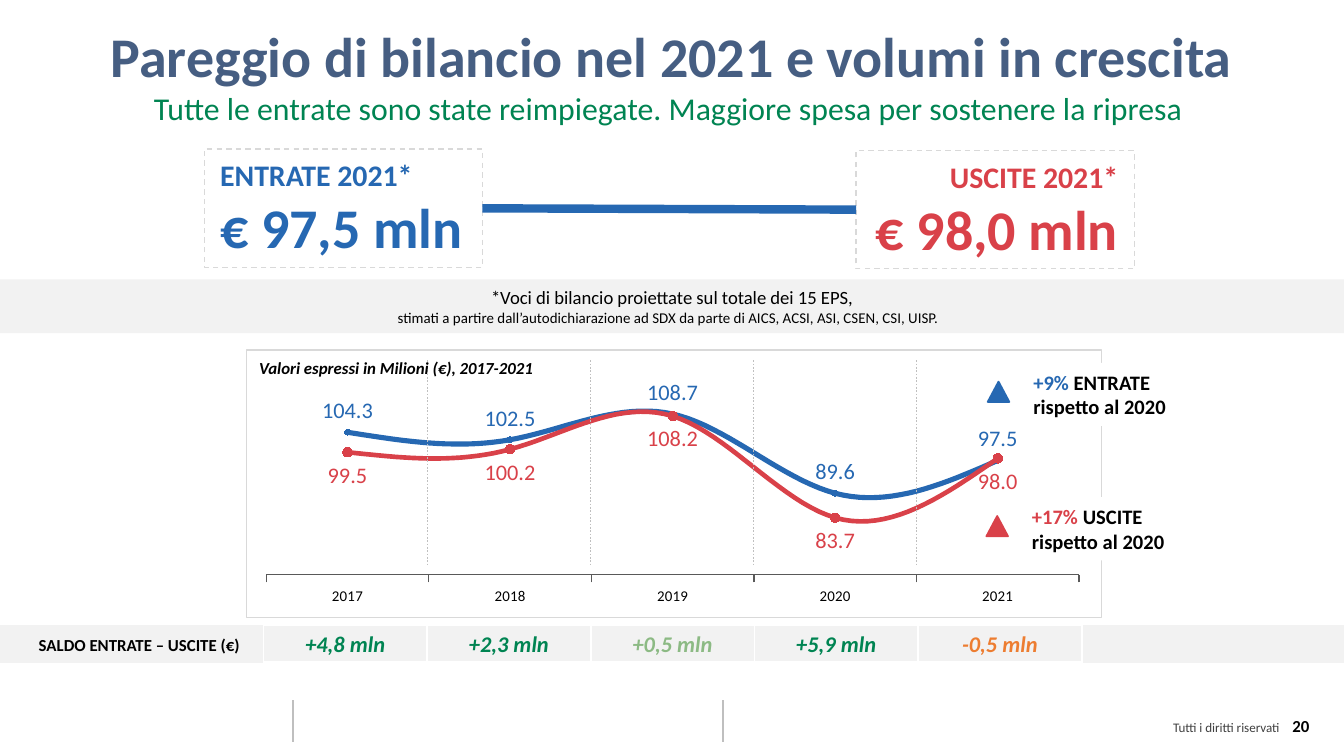
from lxml.etree import SubElement
from pptx import Presentation
from pptx.chart.data import CategoryChartData
from pptx.dml.color import RGBColor
from pptx.enum.chart import XL_CHART_TYPE, XL_LABEL_POSITION, XL_MARKER_STYLE, XL_TICK_LABEL_POSITION, XL_TICK_MARK
from pptx.enum.dml import MSO_LINE
from pptx.enum.shapes import MSO_CONNECTOR, MSO_SHAPE
from pptx.enum.text import MSO_ANCHOR, PP_ALIGN
from pptx.oxml import parse_xml
from pptx.oxml.ns import nsdecls, qn
from pptx.util import Inches, Pt

COLORS = {
    "blue": "2668B2", "red": "D94149", "navy": "465E82", "green": "008452",
    "pale": "8CBA84", "orange": "ED7D31", "black": "000000", "dark": "404040",
    "axis": "595959", "rule": "BFBFBF", "edge": "D9D9D9", "band": "F2F2F2",
    "white": "FFFFFF",
}
LEFT, MID, RIGHT = PP_ALIGN.LEFT, PP_ALIGN.CENTER, PP_ALIGN.RIGHT


def color(name):
    return RGBColor.from_string(COLORS[name])


def style(font, size, tint, bold=False, slant=False):
    font.name = "Calibri"
    font.size = Pt(size)
    font.bold = bold
    font.italic = slant
    font.color.rgb = color(tint)


def write(frame, lines, align=LEFT, wrap=True):
    frame.word_wrap = wrap
    for i, runs in enumerate(lines):
        para = frame.paragraphs[0] if i == 0 else frame.add_paragraph()
        para.alignment = align
        for text, *look in runs:
            run = para.add_run()
            run.text = text
            style(run.font, *look)


def label(slide, box, lines, align=LEFT, wrap=True):
    frame = slide.shapes.add_textbox(*map(Inches, box)).text_frame
    write(frame, lines, align, wrap)
    return frame


def shape(slide, box, fill=None, line=None, width=1, kind=MSO_SHAPE.RECTANGLE):
    item = slide.shapes.add_shape(kind, *map(Inches, box))
    item.shadow.inherit = False
    if fill:
        item.fill.solid()
        item.fill.fore_color.rgb = color(fill)
    else:
        item.fill.background()
    if line:
        item.line.color.rgb = color(line)
        item.line.width = Pt(width)
    else:
        item.line.fill.background()
    return item


def rule(slide, x1, y1, x2, y2, tint, width):
    item = slide.shapes.add_connector(MSO_CONNECTOR.STRAIGHT, *map(Inches, (x1, y1, x2, y2)))
    item.line.color.rgb = color(tint)
    item.line.width = Pt(width)
    SubElement(item._element.spPr, qn("a:effectLst"))
    return item


def footer(slide, box):
    x, y, w, h = box
    for left in (2.18, 5.38):
        rule(slide, x + left, y, x + left, y + h, "rule", 1)
    frame = label(slide, (x + 7.69, y + 0.1, 1.9, 0.19), [[("Tutti i diritti riservati", 7, "dark")]], RIGHT)
    frame.margin_left = frame.margin_right = Inches(0.07)
    frame.margin_top = frame.margin_bottom = Inches(0.04)
    label(slide, (x + 9.32, y + 0.07, 0.52, 0.3), [[("20", 9, "black", True)]], RIGHT)


def title(slide, box):
    label(slide, box, [
        [("Pareggio di bilancio nel 2021 e volumi in crescita", 30, "navy", True)],
        [("Tutte le entrate sono state reimpiegate. Maggiore spesa per sostenere la ripresa ", 17, "green")],
    ], MID)


def total(slide, box, head, value, tint, align):
    x, y, w, h = box
    label(slide, (x + 0.02, y + 0.01, 2.03, h),
          [[(head, 16, tint, True)], [(value, 30, tint, True)]], align, False)
    shape(slide, box, line="edge", width=0.75).line.dash_style = MSO_LINE.DASH


def totals(slide, box):
    x, y, w, h = box
    wide = 2.07
    total(slide, (x, y, wide, h), "ENTRATE 2021*", "€ 97,5 mln", "blue", LEFT)
    total(slide, (x + w - wide, y + 0.01, wide, h), "USCITE 2021*", "€ 98,0 mln", "red", RIGHT)
    rule(slide, x + wide, y + h / 2, x + w - wide, y + h / 2 + 0.01, "blue", 4.5)


def note(slide, box):
    write(shape(slide, box, "band").text_frame, [
        [("*Voci di bilancio proiettate sul totale dei 15 EPS,", 10, "black")],
        [("stimati a partire dall’autodichiarazione ad SDX da parte di "
          "AICS, ACSI, ASI, CSEN, CSI, UISP.  ", 8, "black")],
    ], MID)


def frame_plot(chart):
    area = chart._chartSpace.chart.plotArea
    old = area.find(qn("c:layout"))
    if old is not None:
        area.remove(old)
    spots = zip("xywh", (0.023, 0.064, 0.951, 0.776))
    parts = "".join(f'<c:{key} val="{val}"/>' for key, val in spots)
    area.insert(0, parse_xml(
        f'<c:layout {nsdecls("c")}><c:manualLayout><c:layoutTarget val="inner"/>'
        f'<c:xMode val="edge"/><c:yMode val="edge"/>{parts}</c:manualLayout></c:layout>'))
    chart._chartSpace.chart.addnext(parse_xml(
        f'<c:spPr {nsdecls("c", "a")}><a:noFill/><a:ln w="9525"><a:solidFill>'
        f'<a:srgbClr val="{COLORS["edge"]}"/></a:solidFill></a:ln></c:spPr>'))


def trend(slide, box):
    data = CategoryChartData(number_format="#,##0.0")
    data.categories = ["2017", "2018", "2019", "2020", "2021"]
    data.add_series("Series 1", (104.3, 102.5, 108.7, 89.6, 97.5))
    data.add_series("Series 2", (99.5, 100.2, 108.2, 83.7, 98.0))
    chart = slide.shapes.add_chart(XL_CHART_TYPE.LINE_MARKERS, *map(Inches, box), data).chart
    style(chart.font, 10, "black")
    chart.has_legend = chart.has_title = False
    frame_plot(chart)

    years, scale = chart.category_axis, chart.value_axis
    style(years.tick_labels.font, 8, "black")
    years.tick_label_position = XL_TICK_LABEL_POSITION.LOW
    years.major_tick_mark = XL_TICK_MARK.OUTSIDE
    years.format.line.color.rgb = color("axis")
    years.format.line.width = Pt(0.75)
    scale.minimum_scale, scale.maximum_scale = 70, 120
    scale.has_major_gridlines = scale.visible = False

    chart.plots[0].vary_by_categories = False
    looks = (("blue", 2.75, 3, XL_LABEL_POSITION.ABOVE), ("red", 2.5, 5, XL_LABEL_POSITION.BELOW))
    for line, (tint, width, size, spot) in zip(chart.plots[0].series, looks):
        line.smooth = True
        line.format.line.color.rgb = color(tint)
        line.format.line.width = Pt(width)
        line.marker.style = XL_MARKER_STYLE.CIRCLE
        line.marker.size = size
        line.marker.format.fill.solid()
        line.marker.format.fill.fore_color.rgb = color(tint)
        line.marker.format.line.color.rgb = color(tint)
        tags = line.data_labels
        tags.show_value = True
        tags.position = spot
        tags.number_format = "#,##0.0"
        tags.number_format_is_linked = False
        style(tags.font, 12, tint)


def growth(slide, box, rate, name, tint):
    x, y, w, h = box
    shape(slide, (x, y + 0.14, 0.16, 0.15), tint, tint, kind=MSO_SHAPE.ISOSCELES_TRIANGLE)
    write(shape(slide, (x + 0.24, y, w - 0.24, h), "white").text_frame, [
        [(rate, 11, tint, True), (name, 11, "black", True)],
        [("rispetto al 2020", 11, "black", True)],
    ])


def guides(slide, box):
    x, y, w, h = box
    for i in range(4):
        left = x + i * w / 3
        rule(slide, left, y, left, y + h, "rule", 0.25).line.dash_style = MSO_LINE.DASH
    label(slide, (x - 1.35, y - 0.07, 2.25, 0.25),
          [[("Valori espressi in Milioni (€), 2017-2021", 9, "black", True, True)]], wrap=False)


def border(cell):
    props = cell._tc.get_or_add_tcPr()
    for i, (side, width) in enumerate((("L", 1), ("R", 1), ("T", 1), ("B", 3))):
        props.insert(i, parse_xml(
            f'<a:ln{side} {nsdecls("a")} w="{Pt(width)}"><a:solidFill>'
            f'<a:srgbClr val="{COLORS["white"]}"/></a:solidFill></a:ln{side}>'))


def balance(slide, box):
    x, y, w, h = box
    shape(slide, box, "band", "band")
    label(slide, (x + 0.16, y + 0.01, 1.72, 0.25),
          [[("SALDO ENTRATE – USCITE (€)", 9, "black", True)]], RIGHT, False)
    sums = (("+4,8 mln", "green"), ("+2,3 mln", "green"), ("+0,5 mln", "pale"),
            ("+5,9 mln", "green"), ("-0,5 mln", "orange"))
    place = (x + 1.96, y - 0.01, 6.09, 0.29)
    table = slide.shapes.add_table(1, len(sums), *map(Inches, place)).table
    table.first_row = table.horz_banding = False
    for cell, (text, tint) in zip(table.iter_cells(), sums):
        cell.fill.background()
        border(cell)
        cell.margin_left = cell.margin_right = cell.margin_top = Inches(0.01)
        cell.margin_bottom = 0
        cell.vertical_anchor = MSO_ANCHOR.MIDDLE
        write(cell.text_frame, [[(text, 12, tint, True, True)]], MID)


def main():
    deck = Presentation()
    deck.slide_width = Inches(10)
    deck.slide_height = deck.slide_width * 9 // 16
    slide = deck.slides.add_slide(deck.slide_layouts[6])
    footer(slide, (0, 5.21, 10, 0.31))
    title(slide, (0, 0.11, 10, 0.82))
    totals(slide, (1.52, 1.11, 6.92, 0.88))
    note(slide, (0, 2.08, 10, 0.4))
    trend(slide, (1.83, 2.6, 6.37, 2))
    growth(slide, (7.35, 2.7, 2.26, 0.47), "+9% ", "ENTRATE", "blue")
    growth(slide, (7.34, 3.7, 2.27, 0.47), "+17% ", "USCITE", "red")
    guides(slide, (3.18, 2.68, 3.64, 1.53))
    balance(slide, (0, 4.66, 10, 0.27))
    deck.save("out.pptx")


if __name__ == "__main__":
    main()
